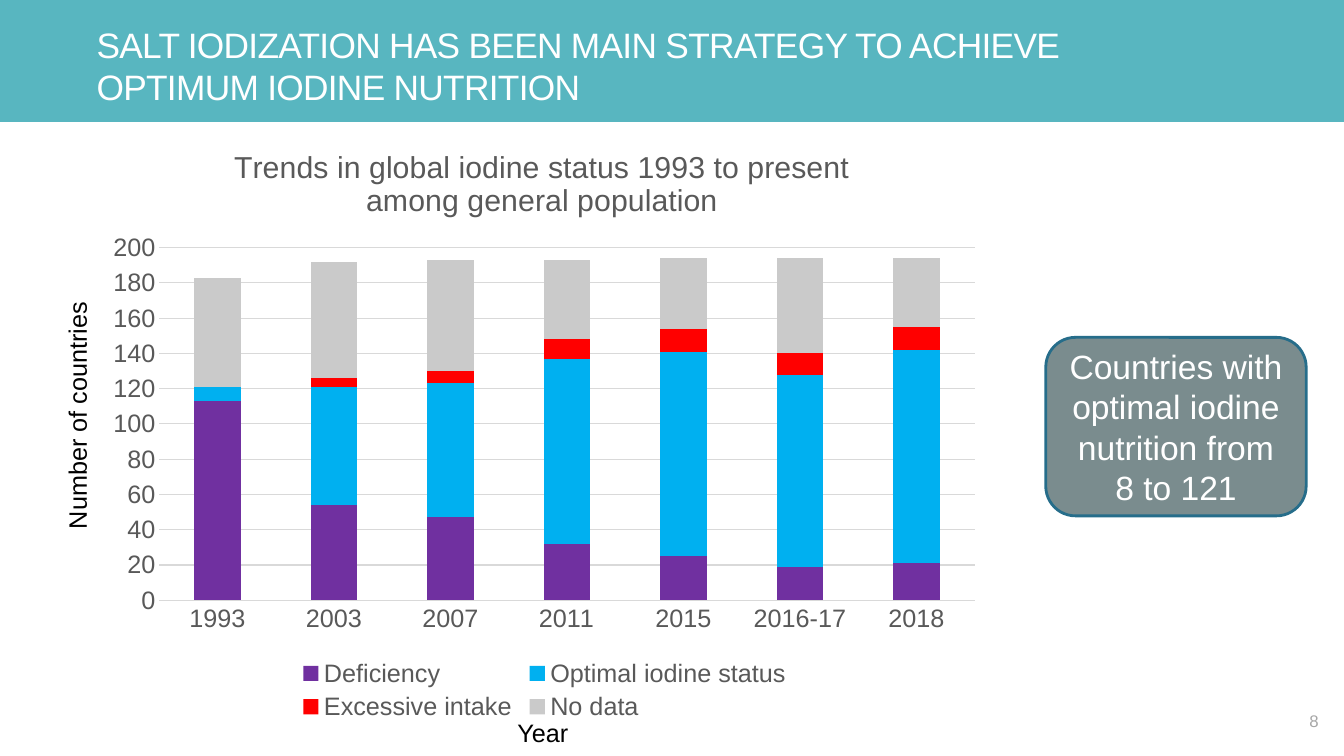
"""Build the slide on trends in global iodine status."""
from lxml import etree
from pptx import Presentation
from pptx.chart import data
from pptx.dml import color
from pptx.enum import chart as ch, shapes, text
from pptx.oxml import parse_xml
from pptx.oxml.ns import nsdecls, qn
from pptx.util import Pt


def paint(fmt, value):
    if hasattr(fmt, "solid"):
        fmt.solid()
        fmt.fore_color.rgb = color.RGBColor.from_string(value)
    else:
        fmt.rgb = color.RGBColor.from_string(value)


def place(element, before, **sizes):
    for old in element.findall(qn("c:layout")):
        element.remove(old)
    layout = parse_xml(f"<c:layout {nsdecls('c')}><c:manualLayout/></c:layout>")
    tags = {"target": "layoutTarget", "xm": "xMode", "ym": "yMode"}
    for key, value in sizes.items():
        etree.SubElement(layout[0], qn("c:" + tags.get(key, key))).set("val", str(value))
    element.find(qn(before)).addprevious(layout)


prs = Presentation()
prs.slide_width, prs.slide_height = Pt(960), Pt(540)
s = prs.slides.add_slide(prs.slide_layouts[5])

band = s.shapes.add_shape(shapes.MSO_SHAPE.RECTANGLE, 0, 0, Pt(960), Pt(87))
band.shadow.inherit = False
paint(band.fill, "58B6C0")
band.line.fill.background()
s.shapes._spTree.insert(2, band._element)

title = s.shapes.title
title.left, title.top, title.width, title.height = Pt(69), Pt(17), Pt(750), Pt(60)
tf = title.text_frame
tf.margin_left = tf.margin_right = tf.margin_top = tf.margin_bottom = 0
tf.vertical_anchor = text.MSO_ANCHOR.BOTTOM
tf.auto_size = text.MSO_AUTO_SIZE.NONE
tf.text = "SALT IODIZATION HAS BEEN MAIN STRATEGY TO ACHIEVE OPTIMUM IODINE NUTRITION"
p = tf.paragraphs[0]
p.alignment = text.PP_ALIGN.LEFT
p.font.size, p.font.name = Pt(25.2), "Arial"
paint(p.font.color, "FFFFFF")
p.runs[0].font._element.set("spc", "-50")

series = [
    ("Deficiency", "7030A0", (113, 54, 47, 32, 25, 19, 21)),
    ("Optimal iodine status", "00B0F0", (8, 67, 76, 105, 116, 109, 121)),
    ("Excessive intake", "FF0000", (0, 5, 7, 11, 13, 12, 13)),
    ("No data", "CACACA", (62, 66, 63, 45, 40, 54, 39)),
]
cd = data.CategoryChartData()
cd.categories = ["1993", "2003", "2007", "2011", "2015", "2016-17", "2018"]
for name, _, values in series:
    cd.add_series(name, values)
chart = s.shapes.add_chart(ch.XL_CHART_TYPE.COLUMN_STACKED,
                           Pt(69), Pt(91.5), Pt(640), Pt(427), cd).chart
chart.font.size, chart.font.name = Pt(18), "Arial"
plot = chart.plots[0]
plot.gap_width, plot.overlap, plot.vary_by_categories = 150, 100, False
for ser, (_, fill, _) in zip(plot.series, series):
    paint(ser.format.fill, fill)

tf = chart.chart_title.text_frame
tf.text = "Trends in global iodine status 1993 to present\namong general population"
for p in tf.paragraphs:
    p.font.size, p.font.name, p.font.bold = Pt(21.6), "Arial", False
    paint(p.font.color, "595959")
chart.chart_title.include_in_layout = False

chart.has_legend = True
chart.legend.position = ch.XL_LEGEND_POSITION.BOTTOM
chart.legend.include_in_layout = False
for axis in (chart.category_axis, chart.value_axis):
    axis.major_tick_mark = axis.minor_tick_mark = ch.XL_TICK_MARK.NONE
for part in (chart.category_axis.tick_labels, chart.value_axis.tick_labels, chart.legend):
    part.font.size, part.font.name = Pt(18), "Arial"
    paint(part.font.color, "595959")
axis = chart.value_axis
axis.minimum_scale, axis.maximum_scale, axis.major_unit = 0, 200, 20
axis.format.line.fill.background()
for line in (chart.category_axis.format.line, axis.major_gridlines.format.line):
    paint(line.fill, "D9D9D9")
    line.width = Pt(0.75)

place(chart.chart_title._element, "c:overlay", xm="edge", ym="edge", x=0.15, y=0.03)
place(chart.legend._element, "c:overlay", xm="edge", ym="edge", x=0.22, y=0.88, w=0.56, h=0.12)
place(chart._chartSpace.chart.plotArea, "c:barChart", target="inner",
      xm="edge", ym="edge", x=0.07, y=0.2, w=0.91, h=0.59)

left, right = text.PP_ALIGN.LEFT, text.PP_ALIGN.RIGHT
labels = [
    ("Number of countries", (-36, 276, 182, 29), 270, 18, "000000", left, True),
    ("Year", (366, 509, 95, 29), 0, 18, "000000", left, True),
    ("8", (931.5, 504, 14, 21.5), 0, 12, "A7A7A7", right, False),
]
for label, box, angle, size, ink, align, wrap in labels:
    sp = s.shapes.add_textbox(*map(Pt, box))
    sp.rotation = angle
    tf = sp.text_frame
    tf.word_wrap = wrap
    tf.margin_left = tf.margin_right = tf.margin_top = tf.margin_bottom = Pt(3.6)
    tf.text = label
    p = tf.paragraphs[0]
    p.alignment = align
    p.font.size, p.font.name = Pt(size), "Arial"
    paint(p.font.color, ink)

callout = s.shapes.add_shape(shapes.MSO_SHAPE.ROUNDED_RECTANGLE,
                             Pt(747), Pt(241), Pt(186), Pt(127.5))
callout.shadow.inherit = False
paint(callout.fill, "7A8C8E")
paint(callout.line.fill, "266D8A")
callout.line.width = Pt(2)
tf = callout.text_frame
tf.word_wrap = True
tf.vertical_anchor = text.MSO_ANCHOR.MIDDLE
tf.text = "Countries with optimal iodine nutrition from 8 to 121"
p = tf.paragraphs[0]
p.alignment = text.PP_ALIGN.CENTER
p.font.size, p.font.name = Pt(24), "Arial"
paint(p.font.color, "FFFFFF")

prs.save("out.pptx")
